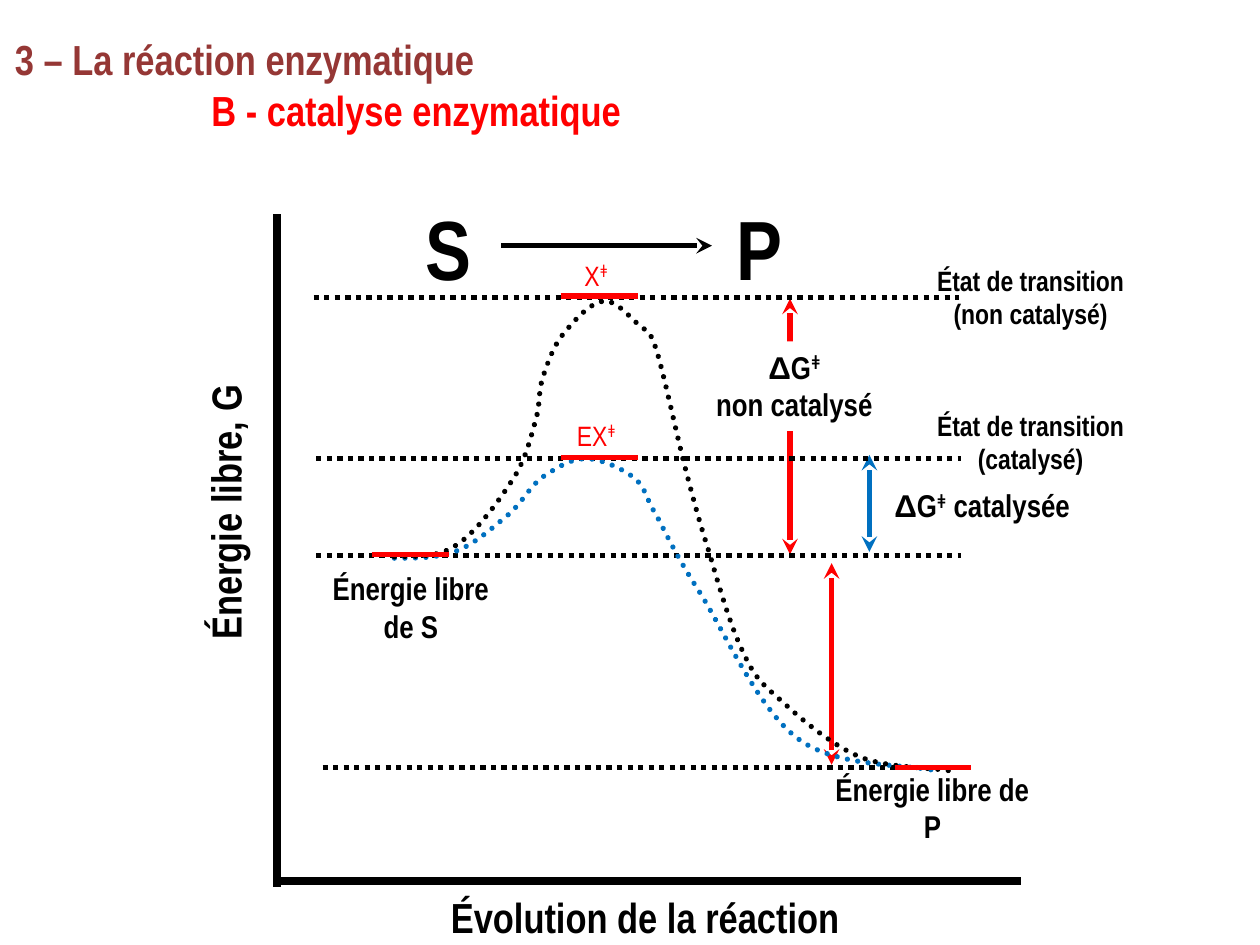
from itertools import groupby

from lxml.etree import SubElement
from pptx import Presentation
from pptx.dml.color import RGBColor
from pptx.enum.dml import MSO_LINE
from pptx.enum.shapes import MSO_CONNECTOR
from pptx.enum.text import MSO_AUTO_SIZE, PP_ALIGN
from pptx.oxml.ns import qn
from pptx.util import Inches, Pt

THEME = {
    "black": "000000", "red": "FF0000", "blue": "0070C0",
    "maroon": "953735", "white": "FFFFFF",
    "font": "Arial Narrow", "greek": "Arial",
    "symbol": 48, "heading": 24, "energy": 18, "state": 16,
    "line": 3, "axis": 4.5,
}

HEADINGS = [("3 – La réaction enzymatique", "maroon", 0),
            ("B - catalyse enzymatique", "red", 1.56)]
HEADINGS_BOX = (0.02, 0.22, 10, 0.91)

AXES = [((2.2, 1.7), (2.2, 7.04)), ((2.2, 6.99), (8.1, 6.99))]

# left end and height of each dotted energy level
LEVELS = [(2.49, 2.36), (2.51, 3.64), (2.51, 4.41), (2.56, 6.09)]
LEVEL_WIDTH = 5.12

# left end and height of each red mark
PLATEAUS = [(4.45, 2.35), (4.45, 3.63), (2.95, 4.4), (7.1, 6.09)]
PLATEAU_WIDTH = 0.61

# x, bottom, top, colour
ENERGY_GAPS = [(6.27, 4.4, 2.37, "red"), (6.6, 6.07, 4.47, "red"),
               (6.9, 4.38, 3.61, "blue")]
REACTION_ARROW = ((3.98, 1.95), (5.65, 1.95))

# each curve: a start point, then three Bézier points per segment
CURVES = [
    ("blue", [
        (3.13, 4.43),
        (3.31, 4.43), (3.48, 4.43), (3.63, 4.37),
        (3.78, 4.31), (3.93, 4.17), (4.04, 4.08),
        (4.15, 3.98), (4.2, 3.87), (4.3, 3.79),
        (4.41, 3.72), (4.52, 3.64), (4.65, 3.64),
        (4.77, 3.64), (4.94, 3.72), (5.03, 3.79),
        (5.13, 3.87), (5.12, 3.95), (5.21, 4.09),
        (5.29, 4.24), (5.35, 4.38), (5.54, 4.68),
        (5.73, 4.97), (6.01, 5.62), (6.33, 5.86),
        (6.64, 6.1), (7.21, 6.06), (7.44, 6.12)]),
    ("black", [
        (3.13, 4.42),
        (3.21, 4.41), (3.45, 4.44), (3.6, 4.34),
        (3.76, 4.25), (3.95, 3.99), (4.06, 3.82),
        (4.17, 3.66), (4.21, 3.48), (4.25, 3.34),
        (4.29, 3.21), (4.27, 3.11), (4.31, 2.99),
        (4.35, 2.87), (4.4, 2.73), (4.48, 2.64),
        (4.56, 2.54), (4.69, 2.4), (4.79, 2.39),
        (4.89, 2.38), (4.99, 2.51), (5.06, 2.57),
        (5.13, 2.64), (5.15, 2.59), (5.21, 2.78),
        (5.27, 2.97), (5.37, 3.45), (5.44, 3.72),
        (5.51, 3.99), (5.55, 4.14), (5.63, 4.39),
        (5.7, 4.63), (5.8, 4.98), (5.9, 5.18),
        (5.99, 5.38), (6.05, 5.43), (6.21, 5.57),
        (6.36, 5.71), (6.61, 5.92), (6.83, 6.01),
        (7.06, 6.1), (7.4, 6.09), (7.55, 6.12)]),
]

# lines of text, box, size, options
LABELS = [
    (["S"], (3.28, 1.51, 0.57, 0.91), "symbol", {"align": "left"}),
    (["P"], (5.75, 1.51, 0.57, 0.91), "symbol", {"align": "left"}),
    (["Évolution de la réaction"], (3.48, 7.03, 3.32, 0.5), "heading",
     {"align": "left"}),
    (["Énergie libre, G"], (0.62, 3.76, 2.33, 0.5), "heading",
     {"align": "left", "rotation": 270}),
    (["Énergie libre de S"], (2.45, 4.47, 1.62, 0.7), "energy", {"wrap": True}),
    (["Énergie libre de P"], (6.5, 6.06, 1.8, 0.7), "energy", {"wrap": True}),
    (["ΔGǂ", "non catalysé"], (5.55, 2.71, 1.51, 0.71), "energy",
     {"fill": "white"}),
    (["ΔGǂ catalysée"], (6.81, 3.81, 1.97, 0.4), "energy", {"wrap": True}),
    (["État de transition", "(non catalysé)"], (7.33, 2.04, 1.7, 0.64),
     "state", {}),
    (["État de transition", "(catalysé)"], (7.33, 3.19, 1.7, 0.64), "state",
     {"fill": "white"}),
    (["Xǂ"], (4.54, 2, 0.43, 0.37), "state",
     {"align": "left", "color": "red", "bold": False}),
    (["EXǂ"], (4.48, 3.27, 0.53, 0.55), "state",
     {"align": "left", "color": "red", "bold": False}),
]
ALIGNMENTS = {"left": PP_ALIGN.LEFT, "center": PP_ALIGN.CENTER,
              "justify": PP_ALIGN.JUSTIFY}


def rgb(color):
    return RGBColor.from_string(THEME[color])


def style_line(line, color, width, dotted=False):
    line.color.rgb = rgb(color)
    line.width = Pt(THEME[width])
    if dotted:
        line.dash_style = MSO_LINE.ROUND_DOT


def add_line(slide, start, end, color="black", width="line", dotted=False,
             heads=()):
    """Heads names the arrow ends: headEnd at the start, tailEnd at the end."""
    connector = slide.shapes.add_connector(
        MSO_CONNECTOR.STRAIGHT, *map(Inches, start + end))
    style_line(connector.line, color, width, dotted)
    properties = connector._element.spPr
    for head in heads:
        SubElement(properties.find(qn("a:ln")), qn("a:" + head), type="stealth")
    SubElement(properties, qn("a:effectLst"))


def add_curve(slide, color, points):
    """Build the outline from its points, then join each three as a Bézier."""
    start, *steps = [(Inches(x), Inches(y)) for x, y in points]
    builder = slide.shapes.build_freeform(*start)
    builder.add_line_segments(steps, close=False)
    curve = builder.convert_to_shape()
    curve.shadow.inherit = False
    curve.fill.background()
    style_line(curve.line, color, "line", dotted=True)
    curve._element.spPr.find(qn("a:ln")).set("cap", "rnd")
    outline = curve._element.xpath(".//a:path")[0]
    for index, step in enumerate(outline.findall(qn("a:lnTo"))):
        if index % 3 == 0:
            segment = SubElement(outline, qn("a:cubicBezTo"))
        segment.append(step[0])
        outline.remove(step)


def write(paragraph, text, size, color, bold, align):
    """Set Δ in the Greek font and raise ǂ."""
    paragraph.alignment = ALIGNMENTS[align]
    for symbol, letters in groupby(text, lambda c: c if c in "Δǂ" else ""):
        run = paragraph.add_run()
        run.text = "".join(letters)
        run.font.name = THEME["greek" if symbol == "Δ" else "font"]
        run.font.size = Pt(THEME[size])
        run.font.bold = bold
        run.font.color.rgb = rgb(color)
        if symbol == "ǂ":
            run.font._element.set("baseline", "30000")


def add_label(slide, lines, box, size, align="center", color="black",
              bold=True, wrap=False, fill=None, rotation=0):
    label = slide.shapes.add_textbox(*map(Inches, box))
    label.rotation = rotation
    if fill:
        label.fill.solid()
        label.fill.fore_color.rgb = rgb(fill)
    frame = label.text_frame
    frame.word_wrap = wrap
    frame.auto_size = MSO_AUTO_SIZE.SHAPE_TO_FIT_TEXT
    for index, text in enumerate(lines):
        paragraph = frame.add_paragraph() if index else frame.paragraphs[0]
        write(paragraph, text, size, color, bold, align)
    return frame


def add_headings(slide):
    frame = add_label(slide, [text for text, _, _ in HEADINGS], HEADINGS_BOX,
                      "heading", align="justify", wrap=True)
    for paragraph, (_, color, indent) in zip(frame.paragraphs, HEADINGS):
        paragraph.runs[0].font.color.rgb = rgb(color)
        paragraph._p.get_or_add_pPr().set("marL", str(Inches(indent)))


def main():
    presentation = Presentation()
    presentation.slide_width, presentation.slide_height = Inches(10), Inches(7.5)
    slide = presentation.slides.add_slide(presentation.slide_layouts[6])

    add_headings(slide)
    for start, end in AXES:
        add_line(slide, start, end, width="axis")
    for x, bottom, top, color in ENERGY_GAPS:
        add_line(slide, (x, bottom), (x, top), color,
                 heads=("headEnd", "tailEnd"))
    add_line(slide, *REACTION_ARROW, heads=("tailEnd",))
    for lines, box, size, options in LABELS:
        add_label(slide, lines, box, size, **options)
    for left, y in LEVELS:
        add_line(slide, (left, y), (left + LEVEL_WIDTH, y), dotted=True)
    for color, points in CURVES:
        add_curve(slide, color, points)
    for left, y in PLATEAUS:
        add_line(slide, (left, y), (left + PLATEAU_WIDTH, y), "red")

    presentation.save("out.pptx")


if __name__ == "__main__":
    main()
